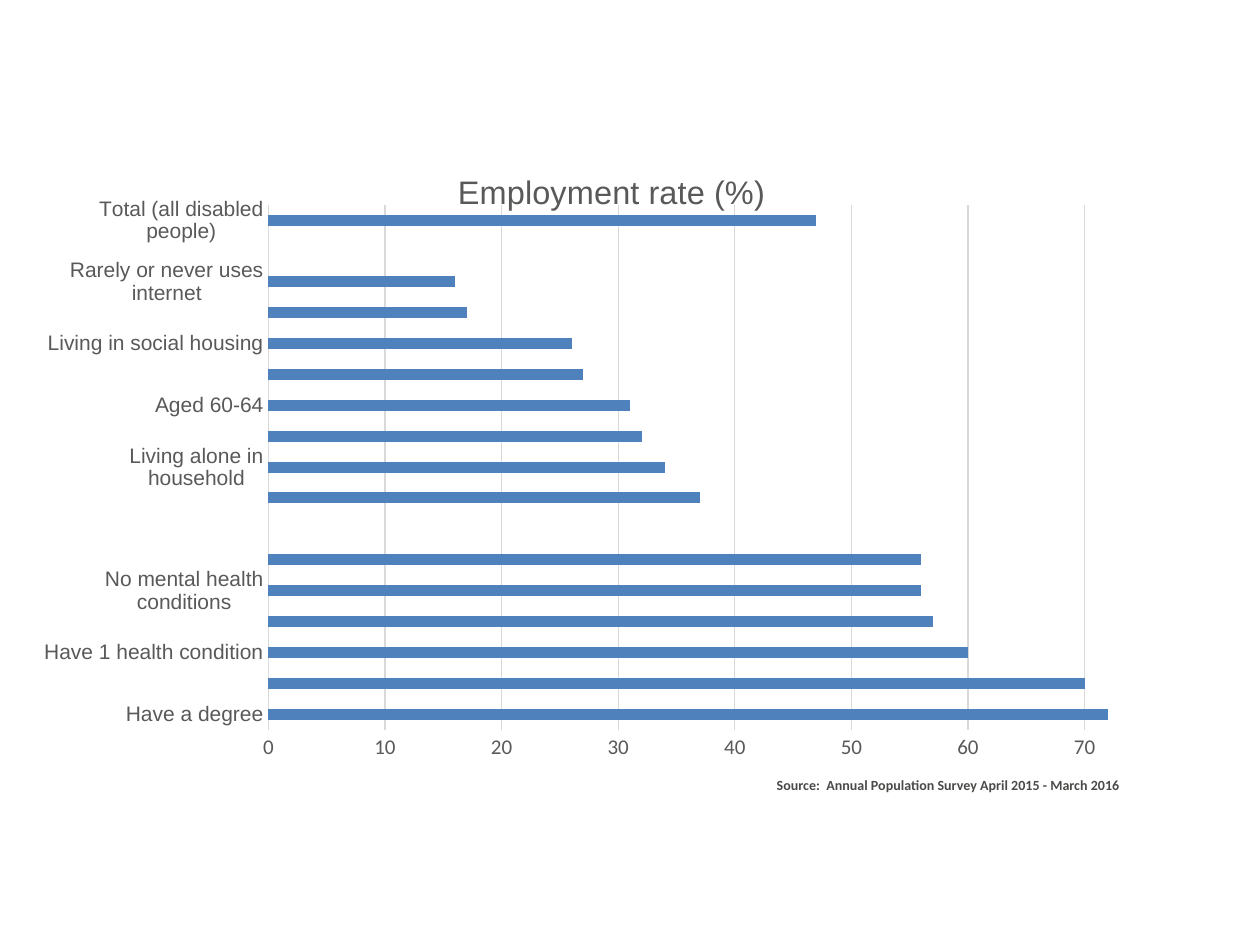
from lxml import etree
from pptx import Presentation
from pptx.chart.data import CategoryChartData
from pptx.dml.color import RGBColor
from pptx.enum.chart import XL_CHART_TYPE, XL_TICK_MARK
from pptx.enum.text import PP_ALIGN
from pptx.oxml.ns import qn
from pptx.util import Cm, Pt

BAR = XL_CHART_TYPE.BAR_CLUSTERED
NO_TICK = XL_TICK_MARK.NONE
CENTER = PP_ALIGN.CENTER

TITLE = "Employment rate (%)"
RATES = [
    ("Have a degree", 72),
    ("Own house, with a mortgage", 70),
    ("Have 1 health condition", 60),
    ("Have a partner or spouse", 57),
    ("No mental health conditions", 56),
    ("Aged 30-44", 56),
    ("", None),
    ("No partner", 37),
    ("Living alone in household", 34),
    ("Have a mental health condition", 32),
    ("Aged 60-64", 31),
    ("Have 4+ health conditions", 27),
    ("Living in social housing", 26),
    ("Have no qualifications", 17),
    ("Rarely or never uses internet", 16),
    ("", None),
    ("Total (all disabled people)", 47),
]
PLOT_AREA = {"x": 0.197, "y": 0.096, "w": 0.772, "h": 0.842}


def color(value):
    return RGBColor.from_string(value)


def set_all(target, values):
    for name, value in values.items():
        setattr(target, name, value)


class SlideBuilder:
    TEXT, GRID, BARS, SOURCE = "595959", "D9D9D9", "4F81BD", "4A4A49"

    def __init__(self, deck):
        self.slide = deck.slides.add_slide(deck.slide_layouts[6])

    def style_font(self, font, name, size, fill, bold=False):
        set_all(font, {"name": name, "size": Pt(size), "bold": bold})
        font.color.rgb = color(fill)

    def style_line(self, line):
        line.color.rgb = color(self.GRID)
        line.width = Pt(0.75)

    def style_axis(self, axis, font_name):
        set_all(axis, {"major_tick_mark": NO_TICK, "minor_tick_mark": NO_TICK})
        self.style_font(axis.tick_labels.font, font_name, 12, self.TEXT)

    def place_plot(self, chart, area):
        """Fix the inner plot area, given as fractions of the chart."""
        plot_area = chart.plots[0]._element.getparent()
        layout = plot_area.find(qn("c:layout"))
        if layout is None:
            layout = etree.Element(qn("c:layout"))
            plot_area.insert(0, layout)
        manual = etree.SubElement(layout, qn("c:manualLayout"))
        settings = {"layoutTarget": "inner", "xMode": "edge", "yMode": "edge", **area}
        for name, value in settings.items():
            etree.SubElement(manual, qn(f"c:{name}")).set("val", str(value))

    def bar_chart(self, title, rows, left, top, width, height):
        data = CategoryChartData(number_format="0")
        data.categories = [label for label, _ in rows]
        data.add_series(title, [rate for _, rate in rows])
        frame = self.slide.shapes.add_chart(
            BAR, Cm(left), Cm(top), Cm(width), Cm(height), data)
        chart = frame.chart
        set_all(chart, {"has_legend": False, "has_title": True})
        self.style_font(chart.font, "Calibri", 10, "000000")

        para = chart.chart_title.text_frame.paragraphs[0]
        span = para.add_run()
        span.text = title
        self.style_font(span.font, "Arial", 18.6, self.TEXT)

        self.style_axis(chart.category_axis, "Arial")
        self.style_line(chart.category_axis.format.line)

        rate_axis = chart.value_axis
        self.style_axis(rate_axis, "Calibri")
        set_all(rate_axis, {"minimum_scale": 0, "maximum_scale": 75,
                            "major_unit": 10, "has_major_gridlines": True})
        set_all(rate_axis.tick_labels,
                {"number_format": "0", "number_format_is_linked": False})
        rate_axis.format.line.fill.background()
        self.style_line(rate_axis.major_gridlines.format.line)

        plot = chart.plots[0]
        set_all(plot, {"gap_width": 182, "vary_by_categories": False})
        fill = plot.series[0].format.fill
        fill.solid()
        fill.fore_color.rgb = color(self.BARS)
        self.place_plot(chart, PLOT_AREA)

    def source_note(self, text, left, top, width, height):
        box = self.slide.shapes.add_textbox(Cm(left), Cm(top), Cm(width), Cm(height))
        box.text_frame.word_wrap = True
        para = box.text_frame.paragraphs[0]
        para.alignment = CENTER
        span = para.add_run()
        span.text = text
        self.style_font(span.font, "Calibri", 8, self.SOURCE, bold=True)


def main():
    deck = Presentation()
    set_all(deck, {"slide_width": Cm(25.4), "slide_height": Cm(19.05)})
    builder = SlideBuilder(deck)
    builder.bar_chart(TITLE, RATES, 0.89, 2.92, 22.86, 12.57)
    builder.source_note("Source:  Annual Population Survey April 2015 - March 2016",
                        12.62, 15.52, 13, 0.6)
    deck.save("out.pptx")


if __name__ == "__main__":
    main()
